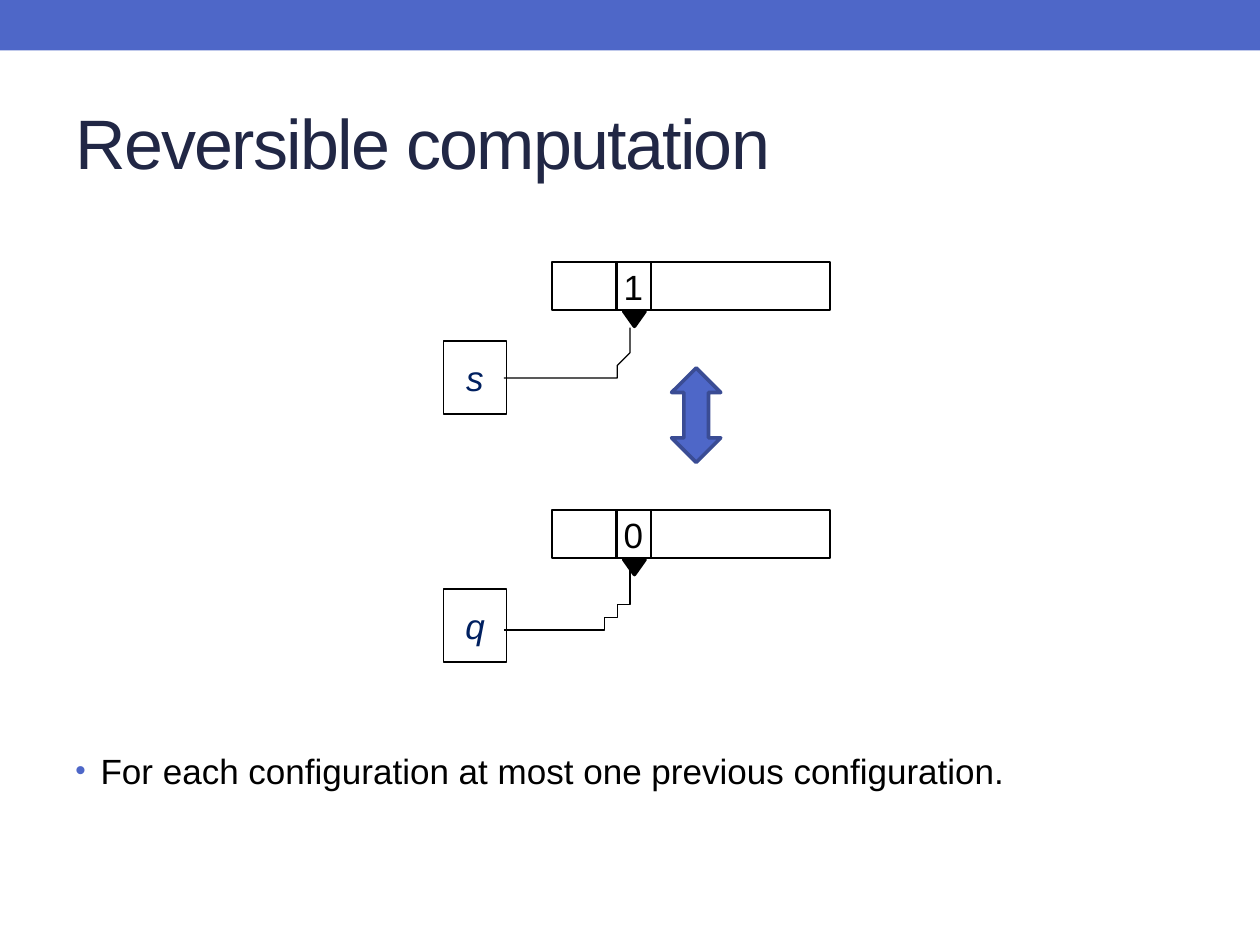
"""Build the slide on reversible computation, on a grid of 100 columns by 75 rows."""
from typing import NamedTuple

from lxml import etree
from pptx import Presentation
from pptx.dml.color import RGBColor
from pptx.enum.shapes import MSO_SHAPE
from pptx.enum.text import MSO_ANCHOR, PP_ALIGN
from pptx.oxml.ns import qn
from pptx.util import Inches, Pt

RECT = MSO_SHAPE.RECTANGLE
TRIANGLE = MSO_SHAPE.ISOSCELES_TRIANGLE
ARROW = MSO_SHAPE.LEFT_RIGHT_ARROW
MIDDLE, LEFT, CENTER = MSO_ANCHOR.MIDDLE, PP_ALIGN.LEFT, PP_ALIGN.CENTER

BLACK = RGBColor(0x00, 0x00, 0x00)
BLUE = RGBColor(0x4E, 0x67, 0xC8)
DARK_BLUE = RGBColor(0x3A, 0x4C, 0x94)
TITLE_NAVY = RGBColor(0x21, 0x27, 0x45)
STATE_NAVY = RGBColor(0x00, 0x20, 0x60)

COLS, ROWS = 100, 75
CELL = Inches(0.1)
CURVE_STEPS = 16
TAPE_HEIGHT = 3.8
HEAD_TIP = (50.1, 4.9)
WIRE = [
    ((40.3, 9.1), (43.3, 9.4), (46.3, 9.7), (47.9, 9.2)),
    ((47.9, 9.2), (49.6, 8.6), (49.9, 6.5), (50.2, 5.8)),
    ((50.2, 5.8), (50.6, 5.1), HEAD_TIP, HEAD_TIP),
]


class Box(NamedTuple):
    """Left, top, width and height in grid units."""
    x: float
    y: float
    w: float
    h: float


class Machine(NamedTuple):
    """One configuration: its top row, state and scanned symbol."""
    top: float
    state: str
    symbol: str


MACHINES = [Machine(20.8, "s", "1"), Machine(40.5, "q", "0")]


def grid(*units: float) -> list[int]:
    """Turn grid units into slide lengths."""
    return [round(u * CELL) for u in units]


def set_line(s, color: RGBColor | None, width: float) -> None:
    """Outline a shape, or hide its outline."""
    s.shadow.inherit = False
    if color is None:
        s.line.fill.background()
    else:
        s.line.color.rgb = color
        s.line.width = Pt(width)


def add_box(shapes, kind, box: Box, fill=None, line=BLACK, width=1.0, rotation=0):
    """Add a preset shape."""
    s = shapes.add_shape(kind, *grid(*box))
    s.rotation = rotation
    set_line(s, line, width)
    if fill is None:
        s.fill.background()
    else:
        s.fill.solid()
        s.fill.fore_color.rgb = fill
    return s


def write(tf, text: str, align, color: RGBColor, size=20, italic=False):
    """Write one paragraph into a text frame and return it."""
    p = tf.paragraphs[0]
    p.alignment = align
    r = p.add_run()
    r.text = text
    formats = {"name": "Arial", "size": Pt(size), "italic": italic, "bold": False}
    for name, value in formats.items():
        setattr(r.font, name, value)
    r.font.color.rgb = color
    return p


def label(s, text: str, color: RGBColor, margins: tuple[float, float], italic=False) -> None:
    """Centre a label in a shape with side and top margins."""
    tf = s.text_frame
    side, edge = grid(*margins)
    formats = {"margin_left": side, "margin_right": side, "margin_top": edge,
               "margin_bottom": edge, "vertical_anchor": MIDDLE}
    for name, value in formats.items():
        setattr(tf, name, value)
    write(tf, text, CENTER, color, italic=italic)


def bezier(curve, t: float) -> tuple[float, float]:
    """Find the point at t on a cubic curve."""
    u = 1 - t
    weights = (u ** 3, 3 * u * u * t, 3 * u * t * t, t ** 3)
    x, y = (sum(w * v for w, v in zip(weights, axis)) for axis in zip(*curve))
    return x, y


def add_wire(shapes, top: float) -> None:
    """Draw the curve from the state box to the reading head."""
    points = [bezier(c, i / CURVE_STEPS) for c in WIRE for i in range(1, CURVE_STEPS + 1)]
    x, y = WIRE[0][0]
    builder = shapes.build_freeform(x, y + top, scale=CELL)
    builder.add_line_segments([(px, py + top) for px, py in points], close=False)
    s = builder.convert_to_shape()
    s.fill.background()
    set_line(s, BLACK, 0.75)


def add_machine(shapes, m: Machine) -> None:
    """Draw a tape, its head and the state box."""
    add_box(shapes, RECT, Box(43.8, m.top, 5.2, TAPE_HEIGHT))
    state = add_box(shapes, RECT, Box(35.2, m.top + 6.25, 5, 5.8))
    label(state, m.state, STATE_NAVY, (1.2, 1.2), italic=True)
    add_box(shapes, TRIANGLE, Box(49.5, m.top + 3.9, 1.7, 1.2), BLACK, width=2.08, rotation=180)
    add_wire(shapes, m.top)
    scanned = add_box(shapes, RECT, Box(48.9, m.top, 2.75, TAPE_HEIGHT))
    label(scanned, m.symbol, BLACK, (0, 0.2))
    add_box(shapes, RECT, Box(51.65, m.top, 14.2, TAPE_HEIGHT))


def add_title(s, text: str) -> None:
    """Place and format the title placeholder."""
    s.left, s.top, s.width, s.height = grid(5, 5.8, 90, 10.8)
    s.text_frame.vertical_anchor = MIDDLE
    p = write(s.text_frame, text, LEFT, TITLE_NAVY, size=40)
    p.runs[0].font._element.set("spc", "-100")


def add_bullet(shapes, text: str) -> None:
    """Add the bulleted statement below the machines."""
    tf = shapes.add_textbox(*grid(5, 59, 90, 11.8)).text_frame
    tf.word_wrap = True
    p = write(tf, text, LEFT, BLACK)
    p.space_before = Pt(6)
    pPr = p._p.get_or_add_pPr()
    pPr.set("marL", str(Inches(0.2)))
    pPr.set("indent", str(Inches(-0.2)))
    color = etree.SubElement(pPr, qn("a:buClr"))
    etree.SubElement(color, qn("a:srgbClr"), val=str(BLUE))
    etree.SubElement(pPr, qn("a:buSzPct"), val="85000")
    etree.SubElement(pPr, qn("a:buFont"), typeface="Arial")
    etree.SubElement(pPr, qn("a:buChar"), char="•")


def main() -> None:
    """Build and save the slide."""
    prs = Presentation()
    prs.slide_width, prs.slide_height = grid(COLS, ROWS)
    slide = prs.slides.add_slide(prs.slide_layouts[5])
    shapes = slide.shapes
    add_box(shapes, RECT, Box(0, 0, COLS, 4), BLUE, line=None)
    add_title(shapes.title, "Reversible computation")
    add_bullet(shapes, "For each configuration at most one previous configuration.")
    for machine in MACHINES:
        add_machine(shapes, machine)
    add_box(shapes, ARROW, Box(51.5, 31, 7.5, 3.9), BLUE, DARK_BLUE, 2.08, rotation=90)
    prs.save("out.pptx")


if __name__ == "__main__":
    main()
